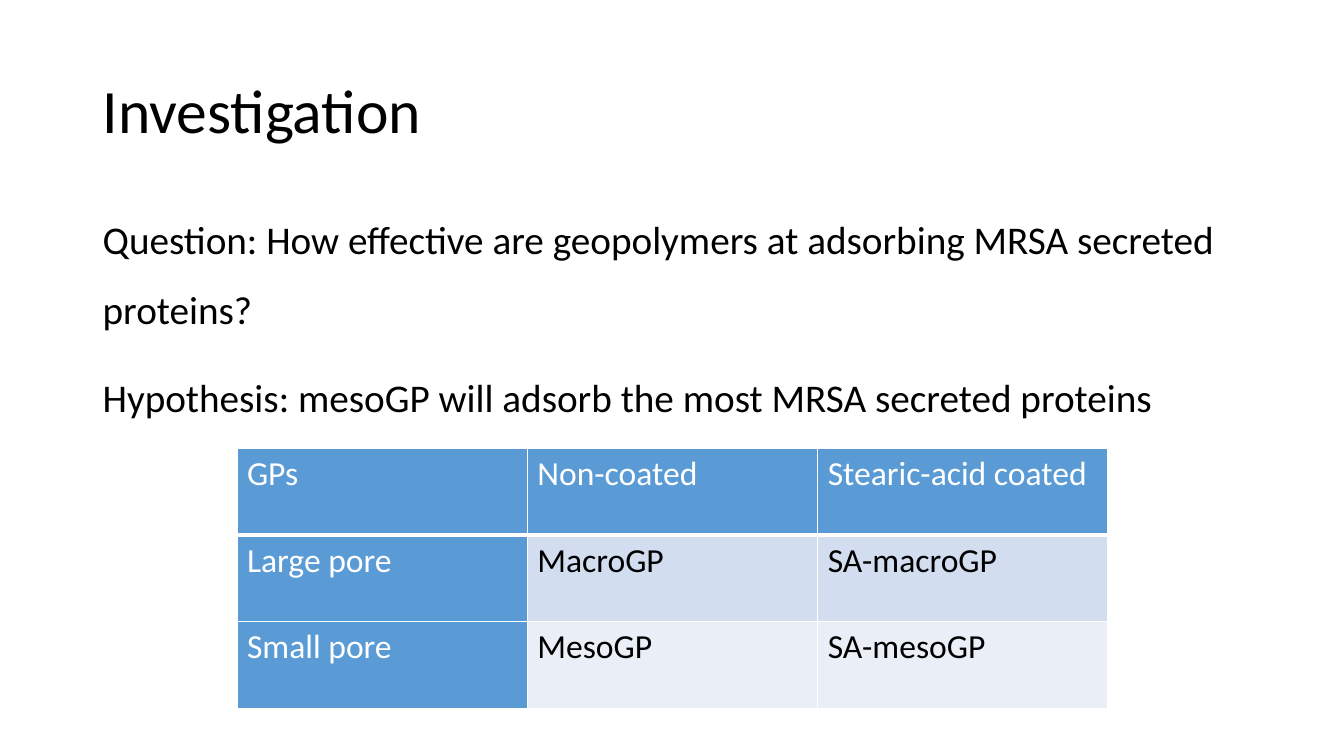
from pptx import Presentation
from pptx.dml.color import RGBColor
from pptx.enum.text import MSO_ANCHOR
from pptx.oxml.ns import qn
from pptx.util import Pt
from lxml.etree import SubElement

EMU_PER_PX = 9144  # 100 px to the inch
FONT = "Calibri"
COLORS = {
    "text": "000000",
    "white": "FFFFFF",
    "header": "5B9BD5",
    "large_pore": "D2DEEF",
    "small_pore": "EAEFF7",
}
GEOPOLYMERS = [
    ["GPs", "Non-coated", "Stearic-acid coated"],
    ["Large pore", "MacroGP", "SA-macroGP"],
    ["Small pore", "MesoGP", "SA-mesoGP"],
]
ROW_FILLS = ["header", "large_pore", "small_pore"]


def px(*lengths):
    return [length * EMU_PER_PX for length in lengths]


def color(name):
    return RGBColor.from_string(COLORS[name])


def style_paragraph(paragraph, size, color_name):
    font = paragraph.font
    font.name, font.size, font.bold = FONT, Pt(size), False
    font.color.rgb = color(color_name)


def add_text(slide, box, lines, size, line_spacing, gap=0, anchor=MSO_ANCHOR.TOP):
    """Add one paragraph per line, with gap points between paragraphs."""
    frame = slide.shapes.add_textbox(*px(*box)).text_frame
    frame.word_wrap = True
    frame.vertical_anchor = anchor
    frame.text = "\n".join(lines)
    for index, paragraph in enumerate(frame.paragraphs):
        style_paragraph(paragraph, size, "text")
        paragraph.line_spacing = line_spacing
        paragraph.space_before = Pt(gap if index else 0)


def add_borders(cell, bottom_width):
    """Draw white 1 pt borders, with a bottom border of its own width."""
    properties = cell._tc.get_or_add_tcPr()
    for side, width in (("L", 1), ("R", 1), ("T", 1), ("B", bottom_width)):
        line = SubElement(properties, qn(f"a:ln{side}"), w=str(Pt(width)))
        fill = SubElement(line, qn("a:solidFill"))
        SubElement(fill, qn("a:srgbClr"), val=COLORS["white"])


def add_geopolymer_table(slide, left, top, column_width, row_height):
    rows, columns = len(GEOPOLYMERS), len(GEOPOLYMERS[0])
    box = px(left, top, column_width * columns, row_height * rows)
    table = slide.shapes.add_table(rows, columns, *box).table
    for row, labels in enumerate(GEOPOLYMERS):
        for column, label in enumerate(labels):
            is_header = row == 0 or column == 0
            cell = table.cell(row, column)
            cell.text = label
            style_paragraph(cell.text_frame.paragraphs[0], 24,
                            "white" if is_header else "text")
            add_borders(cell, 3 if row == 0 else 1)
            cell.fill.solid()
            cell.fill.fore_color.rgb = color("header" if is_header else ROW_FILLS[row])


def main():
    presentation = Presentation()
    presentation.slide_width, presentation.slide_height = px(1333, 750)
    slide = presentation.slides.add_slide(presentation.slide_layouts[6])
    slide.background.fill.solid()
    slide.background.fill.fore_color.rgb = color("white")

    add_text(slide, (92, 40, 1150, 145), ["Investigation"], 44, 0.9,
             anchor=MSO_ANCHOR.MIDDLE)
    add_text(slide, (92, 185, 1158, 232), [
        "Question: How effective are geopolymers at adsorbing MRSA secreted proteins?",
        "Hypothesis: mesoGP will adsorb the most MRSA secreted proteins",
    ], 28, 1.5, gap=12)
    add_geopolymer_table(slide, 235, 445, 288, 86)

    presentation.save("out.pptx")


if __name__ == "__main__":
    main()
